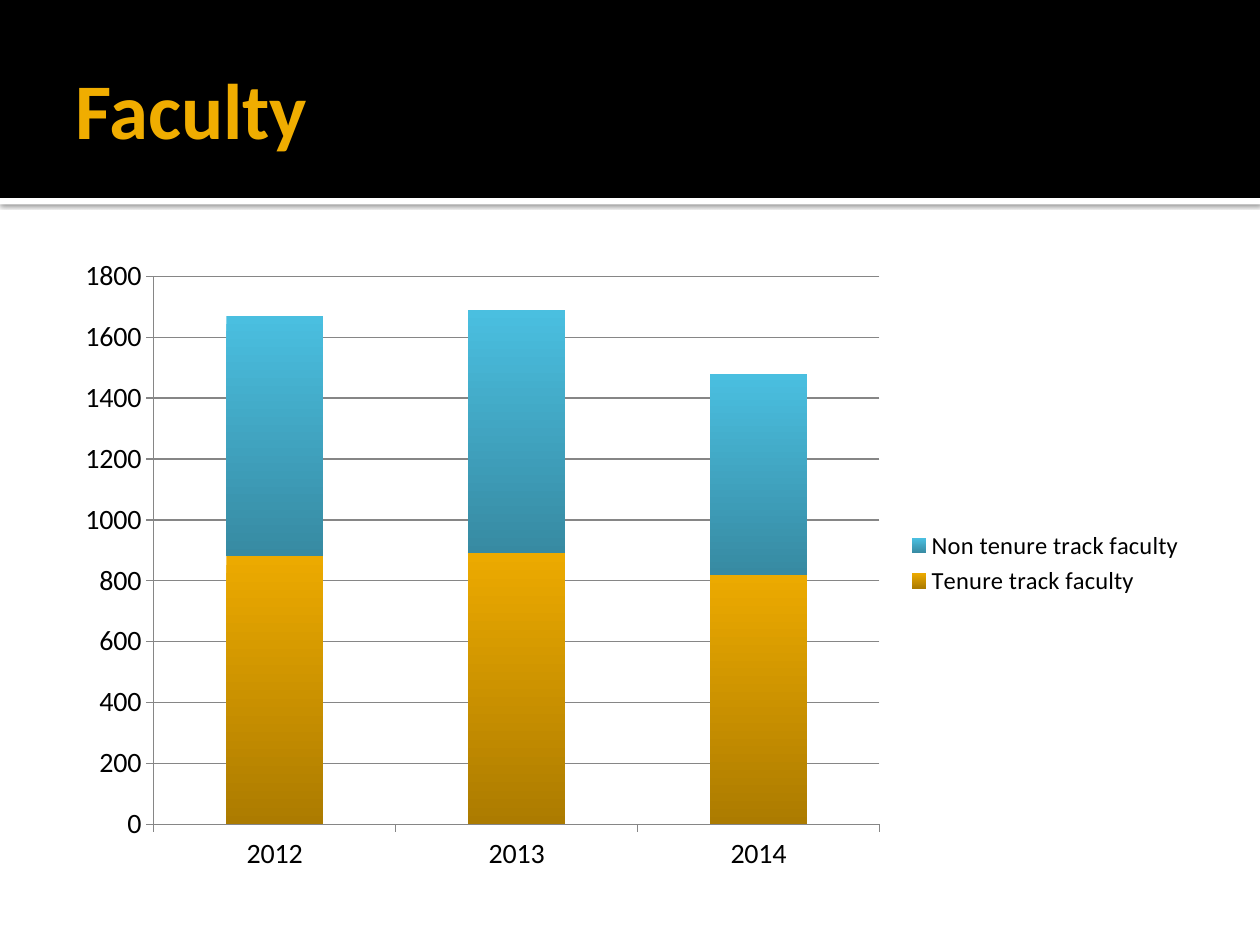
from lxml import etree
from pptx import Presentation
from pptx.chart.data import CategoryChartData
from pptx.dml.color import RGBColor
from pptx.enum import chart as charts, shapes, text
from pptx.oxml import parse_xml
from pptx.oxml.ns import nsdecls, qn
from pptx.util import Cm, Pt

BLACK = RGBColor(0x00, 0x00, 0x00)
WHITE = RGBColor(0xFF, 0xFF, 0xFF)
GRAY = RGBColor(0x86, 0x86, 0x86)
GOLD = RGBColor(0xF0, 0xAD, 0x00)
GOLD_TOP = RGBColor(0xEC, 0xAA, 0x00)
GOLD_BOTTOM = RGBColor(0xAC, 0x7B, 0x00)
BLUE_TOP = RGBColor(0x4A, 0xBF, 0xE0)
BLUE_BOTTOM = RGBColor(0x37, 0x8A, 0xA2)
FONT = "Calibri"

YEARS = ["2012", "2013", "2014"]
SERIES = [
    ("Tenure track faculty", (880, 890, 820), GOLD_TOP, GOLD_BOTTOM),
    ("Non tenure track faculty", (790, 800, 660), BLUE_TOP, BLUE_BOTTOM),
]


def format_font(font, size, color=BLACK, bold=False):
    font.name = FONT
    font.size = Pt(size)
    font.bold = bold
    font.color.rgb = color


def add_text(slide, content, left, top, width, height, **font_format):
    frame = slide.shapes.add_textbox(left, top, width, height).text_frame
    frame.word_wrap = True
    frame.vertical_anchor = text.MSO_ANCHOR.MIDDLE
    frame.margin_right = Cm(0.13)
    run = frame.paragraphs[0].add_run()
    run.text = content
    format_font(run.font, **font_format)


def add_band(slide, left, top, width, height, color):
    band = slide.shapes.add_shape(
        shapes.MSO_SHAPE.RECTANGLE, left, top, width, height)
    band.shadow.inherit = False
    band.fill.solid()
    band.fill.fore_color.rgb = color
    band.line.fill.background()
    return band


def add_drop_shadow(shape):
    effects = shape._element.spPr.find(qn("a:effectLst"))
    shadow = etree.SubElement(
        effects, qn("a:outerShdw"), blurRad=str(Pt(2.5)), dist=str(Pt(0.8)),
        dir="5400000", algn="tl", rotWithShape="0")
    color = etree.SubElement(shadow, qn("a:srgbClr"), val=str(BLACK))
    etree.SubElement(color, qn("a:alpha"), val="60000")


def add_header(slide, left, top, width, height):
    strip = add_band(slide, left, top + height, width, Cm(0.13), WHITE)
    add_drop_shadow(strip)
    add_band(slide, left, top, width, height, BLACK)
    margin = Cm(1.27)
    add_text(slide, "Faculty", left + margin, top + Cm(0.43),
             width - 2 * margin, Cm(3.48), size=45, color=GOLD, bold=True)


def format_axis(axis):
    format_font(axis.tick_labels.font, 16)
    axis.major_tick_mark = charts.XL_TICK_MARK.OUTSIDE
    axis.minor_tick_mark = charts.XL_TICK_MARK.NONE
    axis.format.line.color.rgb = GRAY
    axis.format.line.width = Pt(0.75)


def set_plot_layout(chart, **fractions):
    plot_area = chart._chartSpace.chart.plotArea
    for layout in plot_area.findall(qn("c:layout")):
        plot_area.remove(layout)
    values = "".join(f'<c:{name} val="{value}"/>' for name, value in fractions.items())
    plot_area.insert(0, parse_xml(
        f'<c:layout {nsdecls("c")}><c:manualLayout><c:layoutTarget val="inner"/>'
        f'<c:xMode val="edge"/><c:yMode val="edge"/>{values}'
        '</c:manualLayout></c:layout>'))


def add_faculty_chart(slide, left, top, width, height):
    data = CategoryChartData()
    data.categories = YEARS
    for name, values, *_ in SERIES:
        data.add_series(name, values)
    chart = slide.shapes.add_chart(
        charts.XL_CHART_TYPE.COLUMN_STACKED, left, top, width, height, data).chart
    format_font(chart.font, 10)
    chart.has_title = False
    chart.has_legend = True
    chart.legend.position = charts.XL_LEGEND_POSITION.RIGHT
    chart.legend.include_in_layout = False
    format_font(chart.legend.font, 14)

    plot = chart.plots[0]
    plot.gap_width = 150
    plot.overlap = 100
    plot.vary_by_categories = False
    for series, (_, _, *colors) in zip(plot.series, SERIES):
        fill = series.format.fill
        fill.gradient()
        fill.gradient_angle = 270
        for stop, position, color in zip(fill.gradient_stops, (0, 1), colors):
            stop.position = position
            stop.color.rgb = color

    format_axis(chart.category_axis)
    value_axis = chart.value_axis
    format_axis(value_axis)
    value_axis.minimum_scale = 0
    value_axis.maximum_scale = 1800
    value_axis.major_unit = 200
    value_axis.has_major_gridlines = True
    value_axis.major_gridlines.format.line.color.rgb = GRAY
    value_axis.major_gridlines.format.line.width = Pt(0.75)
    set_plot_layout(chart, x=0.08, y=0.05, w=0.64, h=0.86)


def main():
    presentation = Presentation()
    presentation.slide_width = Cm(25.4)
    presentation.slide_height = Cm(19.05)
    slide = presentation.slides.add_slide(presentation.slide_layouts[6])
    add_header(slide, Cm(0), Cm(0), presentation.slide_width, Cm(3.99))
    add_faculty_chart(slide, Cm(1.27), Cm(4.93), Cm(22.86), Cm(12.85))
    presentation.save("out.pptx")


if __name__ == "__main__":
    main()
